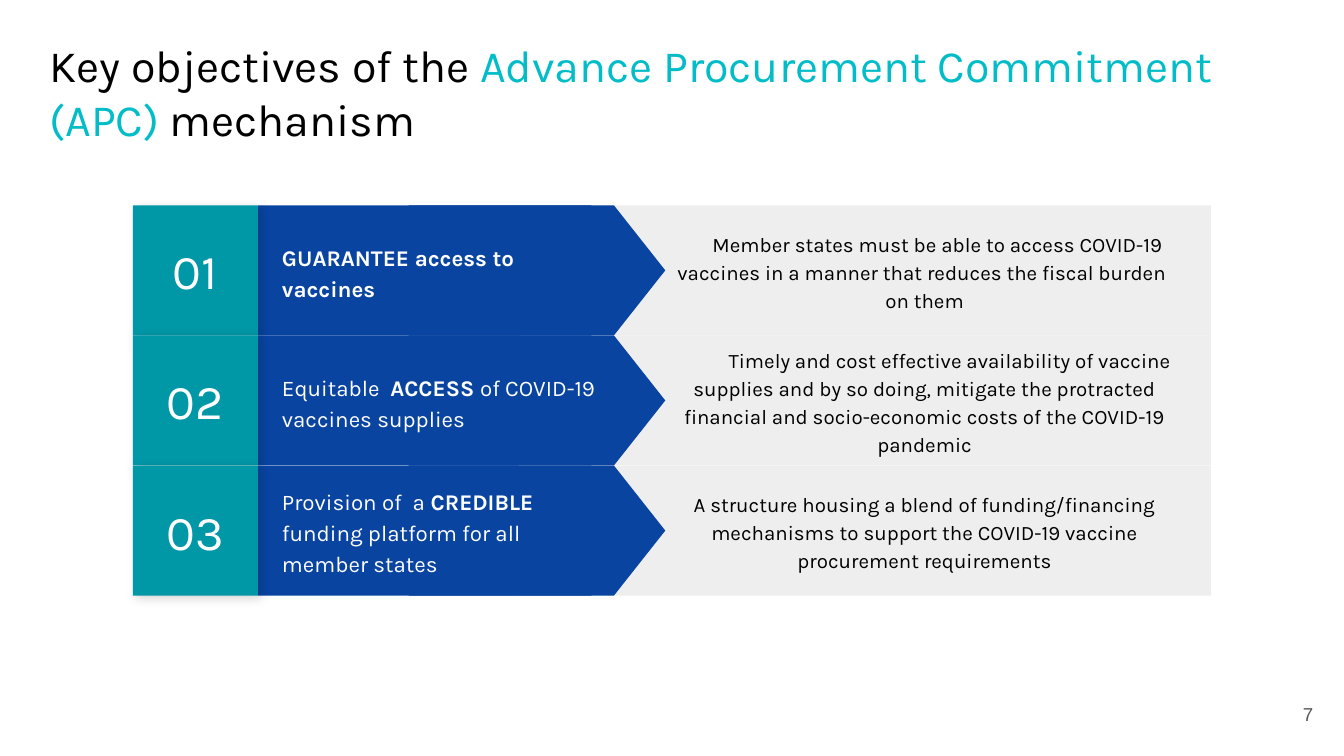
from lxml import etree
from pptx import Presentation
from pptx.dml.color import RGBColor
from pptx.enum.shapes import MSO_SHAPE
from pptx.enum.text import MSO_ANCHOR, PP_ALIGN
from pptx.oxml.ns import qn
from pptx.util import Pt

RECTANGLE = MSO_SHAPE.RECTANGLE
ARROW = MSO_SHAPE.FLOWCHART_OFFPAGE_CONNECTOR
TOP, MIDDLE = MSO_ANCHOR.TOP, MSO_ANCHOR.MIDDLE
LEFT, CENTER, RIGHT = PP_ALIGN.LEFT, PP_ALIGN.CENTER, PP_ALIGN.RIGHT

BLACK, WHITE, GRAY = "000000", "FFFFFF", "595959"
TURQUOISE, TEAL, BLUE, PALE = "02BDC7", "0097A7", "0944A1", "EEEEEE"

TITLE = [
    ("Key objectives of the ", BLACK, False),
    ("Advance Procurement Commitment (APC) ", TURQUOISE, False),
    ("mechanism", BLACK, False),
]
PAGE_NUMBER = "7"
OBJECTIVES = [
    {
        "number": "01",
        "goal": [("GUARANTEE access to vaccines", WHITE, True)],
        "details": [
            "Member states must be able to access COVID-19 "
            "vaccines in a manner that reduces the fiscal burden ",
            "on them",
        ],
        "indent": 14,
    },
    {
        "number": "02",
        "goal": [
            ("Equitable  ", WHITE, False),
            ("ACCESS ", WHITE, True),
            ("of COVID-19 vaccines supplies", WHITE, False),
        ],
        "details": [
            "Timely and cost effective availability of vaccine supplies and "
            "by so doing, mitigate the protracted financial and "
            "socio-economic costs of the COVID-19 pandemic",
        ],
        "indent": 27,
    },
    {
        "number": "03",
        "goal": [
            ("Provision of  a", WHITE, False),
            (" CREDIBLE ", WHITE, True),
            ("funding platform for all member states", WHITE, False),
        ],
        "details": [
            "A structure housing a blend of funding/financing mechanisms to "
            "support the COVID-19 vaccine procurement requirements",
        ],
        "indent": 0,
    },
]

ROWS_TOP, ROW_HEIGHT = 110, 69.7
NUMBER_LEFT, NUMBER_WIDTH = 71.2, 67
GOAL_LEFT, GOAL_WIDTH = 138.2, 178.6
ARROW_LEFT, ARROW_LENGTH = 218.9, 137.5
PANEL_LEFT, PANEL_WIDTH = 277.9, 370.8
DETAIL_LEFT, DETAIL_WIDTH = 342, 306.7

prs = Presentation()
prs.slide_width, prs.slide_height = Pt(720), Pt(405)
slide = prs.slides.add_slide(prs.slide_layouts[6])


def color(value):
    return RGBColor.from_string(value)


def add_block(kind, left, top, width, height, fill):
    block = slide.shapes.add_shape(kind, Pt(left), Pt(top), Pt(width), Pt(height))
    block.shadow.inherit = False
    block.fill.solid()
    block.fill.fore_color.rgb = color(fill)
    block.line.fill.background()
    return block


def write(holder, paragraphs, size, align=LEFT, anchor=MIDDLE, spacing=None,
          font="Karla", indent=0):
    frame = holder.text_frame
    frame.word_wrap = True
    frame.vertical_anchor = anchor
    frame.margin_left = frame.margin_right = Pt(7.2)
    frame.margin_top = frame.margin_bottom = Pt(7.2)
    for index, runs in enumerate(paragraphs):
        paragraph = frame.add_paragraph() if index else frame.paragraphs[0]
        paragraph.alignment = align
        paragraph.line_spacing = spacing
        if indent and index == 0:
            paragraph._p.get_or_add_pPr().set("indent", str(Pt(indent)))
        for words, ink, bold in runs:
            run = paragraph.add_run()
            run.text = words
            run.font.name = font
            run.font.size = Pt(size)
            run.font.bold = bold
            run.font.color.rgb = color(ink)


def add_text(left, top, width, height, paragraphs, size, **style):
    box = slide.shapes.add_textbox(Pt(left), Pt(top), Pt(width), Pt(height))
    write(box, paragraphs, size, **style)


def cast_shadow(block):
    effects = block._element.spPr.find(qn("a:effectLst"))
    shadow = etree.SubElement(effects, qn("a:outerShdw"), blurRad=str(Pt(5.6)),
                              dist=str(Pt(2.2)), dir="2700000", algn="tl",
                              rotWithShape="0")
    tint = etree.SubElement(shadow, qn("a:srgbClr"), val=BLACK)
    etree.SubElement(tint, qn("a:alpha"), val="17000")


add_text(667.4, 367.2, 43.2, 31, [[(PAGE_NUMBER, GRAY, False)]], 10,
         align=RIGHT, font="Arial")
add_text(19.4, 13, 690.5, 72.7, [TITLE], 24, anchor=TOP)

for row, objective in enumerate(OBJECTIVES):
    top = ROWS_TOP + row * ROW_HEIGHT
    add_block(RECTANGLE, PANEL_LEFT, top, PANEL_WIDTH, ROW_HEIGHT, PALE)
    add_block(RECTANGLE, GOAL_LEFT, top, GOAL_WIDTH, ROW_HEIGHT, BLUE)
    turn = (ARROW_LENGTH - ROW_HEIGHT) / 2
    arrow = add_block(ARROW, ARROW_LEFT + turn, top - turn,
                      ROW_HEIGHT, ARROW_LENGTH, BLUE)
    arrow.rotation = 270
    add_text(144, top + 8, 188, 54, [objective["goal"]], 12, spacing=1.15)
    tile = add_block(RECTANGLE, NUMBER_LEFT, top, NUMBER_WIDTH, ROW_HEIGHT, TEAL)
    cast_shadow(tile)
    write(tile, [[(objective["number"], WHITE, False)]], 26, align=CENTER)
    add_text(DETAIL_LEFT, top, DETAIL_WIDTH, ROW_HEIGHT,
             [[(line, BLACK, False)] for line in objective["details"]], 11,
             align=CENTER, spacing=1.15, indent=objective["indent"])

prs.save("out.pptx")
